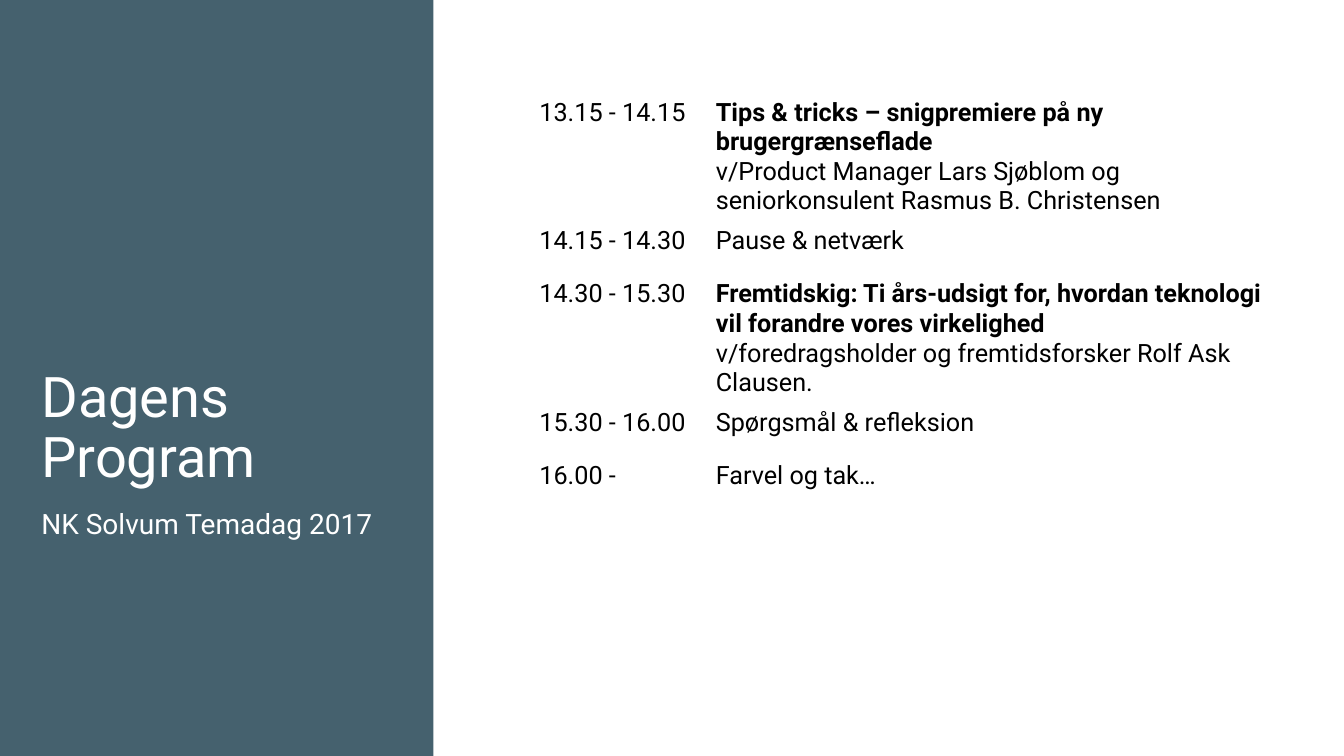
from pptx import Presentation
from pptx.dml.color import RGBColor
from pptx.enum.shapes import MSO_SHAPE
from pptx.enum.text import MSO_ANCHOR, MSO_AUTO_SIZE, PP_ALIGN
from pptx.util import Inches, Pt

SLATE = RGBColor(0x45, 0x61, 0x6E)
WHITE = RGBColor(0xFF, 0xFF, 0xFF)
BLACK = RGBColor(0, 0, 0)

# Time, lines of text; the first of two lines is a bold heading
PROGRAM = [
    ("13.15 - 14.15", ["Tips & tricks – snigpremiere på ny brugergrænseflade",
                       "v/Product Manager Lars Sjøblom og seniorkonsulent Rasmus B. Christensen"]),
    ("14.15 - 14.30", ["Pause & netværk"]),
    ("14.30 - 15.30", ["Fremtidskig: Ti års-udsigt for, hvordan teknologi vil forandre vores virkelighed",
                       "v/foredragsholder og fremtidsforsker Rolf Ask Clausen."]),
    ("15.30 - 16.00", ["Spørgsmål & refleksion"]),
    ("16.00 -", ["Farvel og tak…"]),
]
COLUMN_WIDTHS = [1.75, 2.9, 2.9]
ROW_HEIGHTS = [0.53] * 5 + [0.93, 0.53]


class ProgramSlide:
    font = "Roboto"

    def __init__(self, prs):
        self.s = prs.slides.add_slide(prs.slide_layouts[5])

    def style(self, p, size, color):
        for r in p.runs:
            r.font.name = self.font
            r.font.size = Pt(size)
            r.font.color.rgb = color

    def panel(self, x, y, w, h, color):
        sp = self.s.shapes.add_shape(MSO_SHAPE.RECTANGLE, Inches(x), Inches(y), Inches(w), Inches(h))
        sp.shadow.inherit = False
        sp.fill.solid()
        sp.fill.fore_color.rgb = color
        sp.line.fill.background()
        # Keep the panel behind the title
        self.s.shapes.title.element.addprevious(sp.element)

    def fill_text(self, sp, text, size, bottom, anchor):
        tf = sp.text_frame
        tf.text = text
        tf.word_wrap = True
        tf.auto_size = MSO_AUTO_SIZE.NONE
        tf.vertical_anchor = anchor
        tf.margin_left = tf.margin_right = 0
        tf.margin_top, tf.margin_bottom = Inches(0.04), Inches(bottom)
        p = tf.paragraphs[0]
        p.alignment = PP_ALIGN.LEFT
        p.line_spacing = 0.9
        p.space_before = Pt(0)
        self.style(p, size, WHITE)

    def title(self, x, y, w, h, text):
        sp = self.s.shapes.title
        sp.left, sp.top, sp.width, sp.height = Inches(x), Inches(y), Inches(w), Inches(h)
        self.fill_text(sp, text, 40, 0.16, MSO_ANCHOR.BOTTOM)

    def subtitle(self, x, y, w, h, text):
        sp = self.s.shapes.add_textbox(Inches(x), Inches(y), Inches(w), Inches(h))
        self.fill_text(sp, text, 20, 0.04, MSO_ANCHOR.TOP)

    def table(self, x, y, widths, heights, entries):
        table = self.s.shapes.add_table(len(heights), len(widths), Inches(x), Inches(y),
                                        Inches(sum(widths)), Inches(sum(heights))).table
        table.first_row = table.horz_banding = False
        for column, width in zip(table.columns, widths):
            column.width = Inches(width)
        for row, height in zip(table.rows, heights):
            row.height = Inches(height)
        for cell in table.iter_cells():
            cell.fill.background()
        # All rows but the last span the two text columns
        for i in range(len(heights) - 1):
            table.cell(i, 1).merge(table.cell(i, 2))
        for i, (time, lines) in enumerate(entries):
            for j, text in enumerate([time, "\v".join(lines)]):
                p = table.cell(i, j).text_frame.paragraphs[0]
                p.text = text
                self.style(p, 18, BLACK)
                if len(p.runs) > 1:
                    p.runs[0].font.bold = True


def main():
    prs = Presentation()
    prs.slide_width, prs.slide_height = Inches(13.33), Inches(7.5)
    slide = ProgramSlide(prs)

    # Left panel with heading
    slide.panel(0, 0, 4.3, 7.5, SLATE)
    slide.title(0.41, 3.1, 3.42, 1.92, "Dagens Program")
    slide.subtitle(0.41, 5.02, 3.42, 0.38, "NK Solvum Temadag 2017")

    # Programme of the day
    slide.table(5.25, 0.92, COLUMN_WIDTHS, ROW_HEIGHTS, PROGRAM)

    prs.save("out.pptx")


if __name__ == "__main__":
    main()
